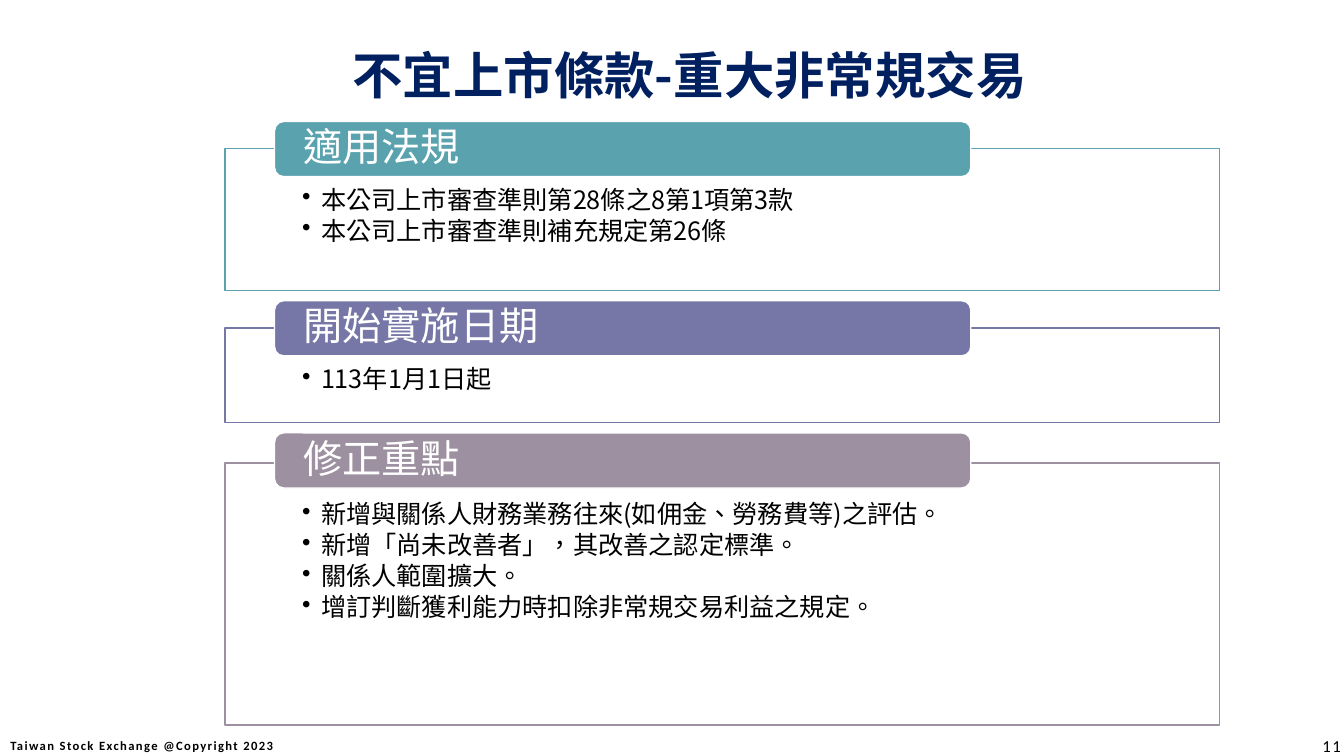
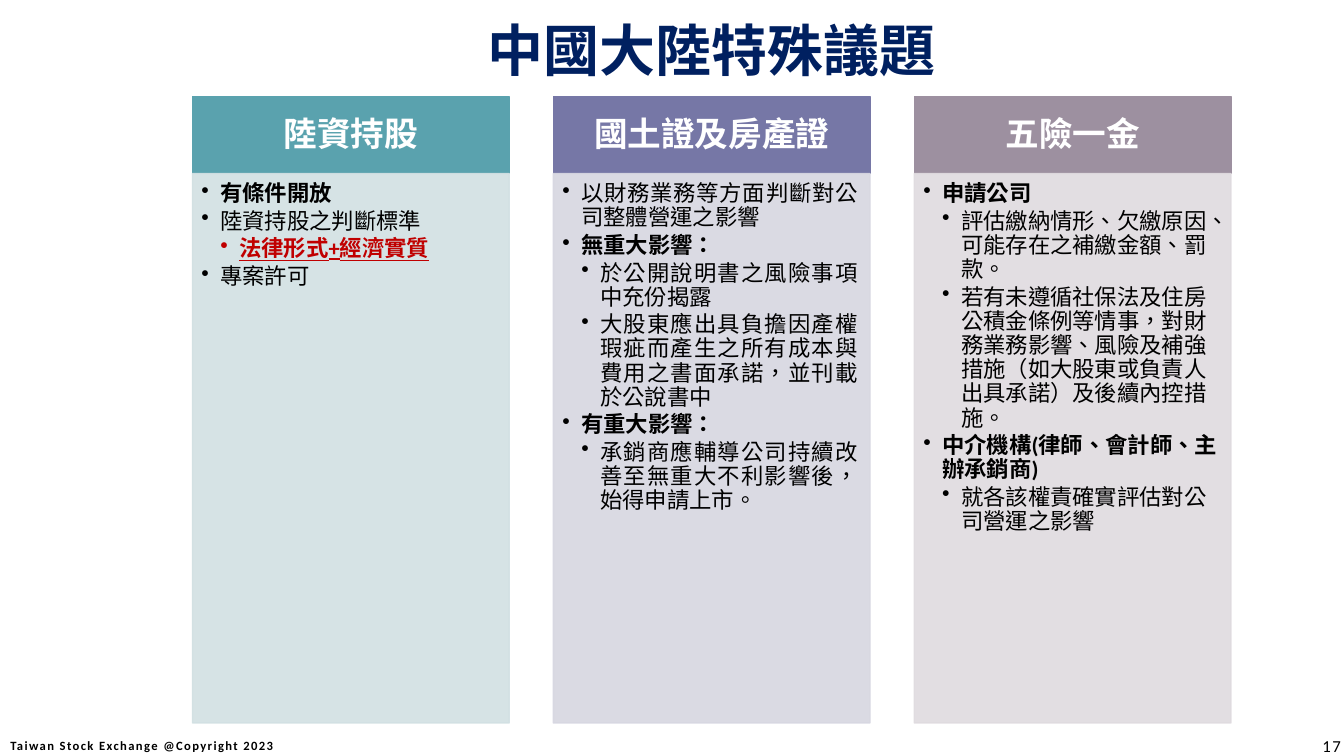
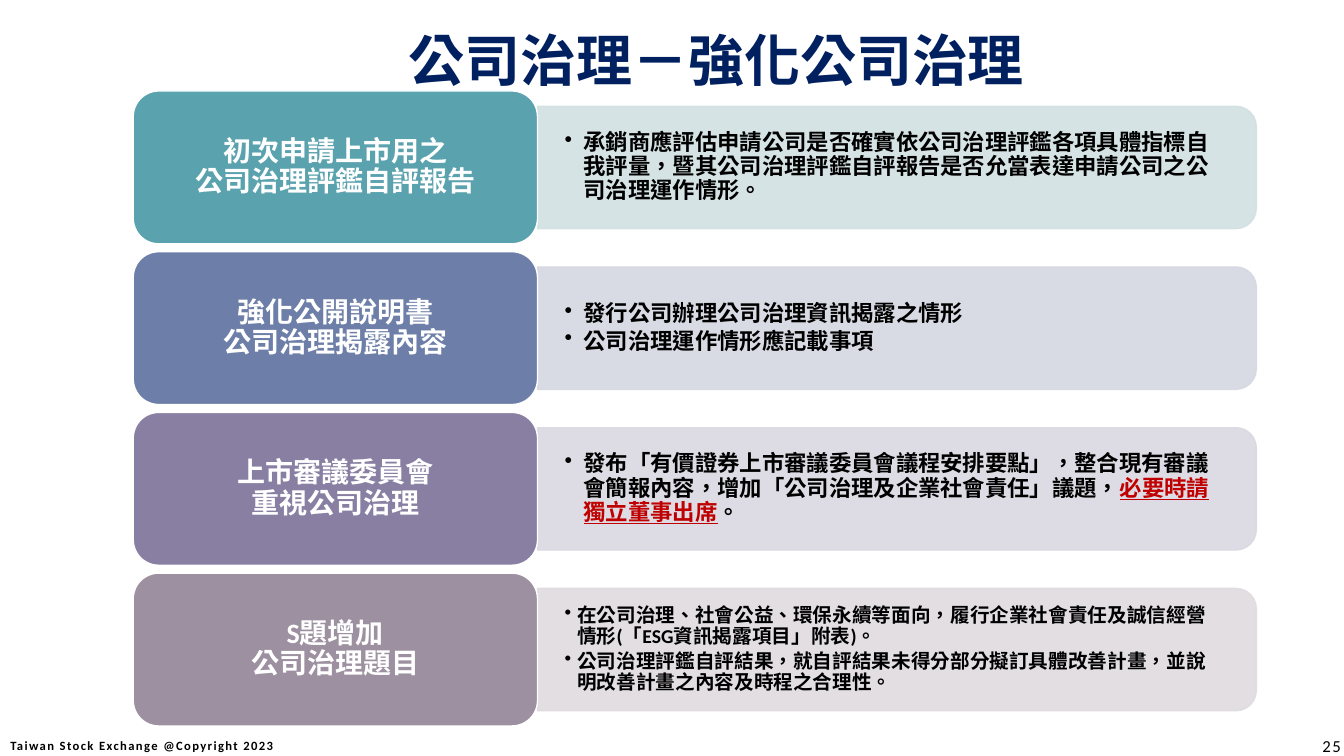
from lxml import etree
from pptx import Presentation
from pptx.dml.color import RGBColor
from pptx.enum.shapes import MSO_SHAPE
from pptx.enum.text import MSO_ANCHOR, PP_ALIGN
from pptx.oxml.ns import qn
from pptx.util import Pt

RECT, ROUNDED, HALF_ROUNDED = (
    MSO_SHAPE.RECTANGLE, MSO_SHAPE.ROUNDED_RECTANGLE, MSO_SHAPE.ROUND_2_SAME_RECTANGLE)
TOP, MIDDLE = MSO_ANCHOR.TOP, MSO_ANCHOR.MIDDLE
LEFT, CENTER, RIGHT, JUSTIFY = PP_ALIGN.LEFT, PP_ALIGN.CENTER, PP_ALIGN.RIGHT, PP_ALIGN.JUSTIFY

SANS, BODY, SERIF = "Noto Sans CJK SC", "Calibri", "Vollkorn"
WHITE, BLACK, NAVY, RED = "FFFFFF", "000000", "002060", "C00000"
TEAL, BLUE, INDIGO, VIOLET, MAUVE = "5AA2AE", "6D7FA8", "7677A6", "887FA3", "9D90A0"
TEAL_TINT, BLUE_TINT, INDIGO_TINT = "D2E0E3", "D5D8E2", "D7D7E1"
VIOLET_TINT, MAUVE_TINT = "DAD8E0", "DFDBDF"

BOLD = {"bold": True}
KEY = {"bold": True, "underline": True, "color": RED}
COPYRIGHT = "Taiwan Stock Exchange @Copyright 2023"


def rgb(value):
    """Turn a hex string into a colour."""
    return RGBColor.from_string(value)


def paint(fill, color, alpha=100):
    """Give a fill a solid colour, with its opacity in percent."""
    fill.solid()
    fill.fore_color.rgb = rgb(color)
    if alpha < 100:
        for node in fill._xPr.iter(qn("a:srgbClr")):
            etree.SubElement(node, qn("a:alpha")).set("val", str(alpha * 1000))


def add_box(page, kind, area, fill, line, alpha=100):
    """Add a filled and outlined preset shape."""
    box = page.shapes.add_shape(kind, *map(Pt, area))
    box.shadow.inherit = False
    paint(box.fill, fill, alpha)
    paint(box.line.fill, line, alpha)
    box.line.width = Pt(1)
    return box


def add_text_box(page, area):
    """Add an empty text box."""
    return page.shapes.add_textbox(*map(Pt, area))


def add_span(para, text, style):
    """Add a run in the given style."""
    span = para.add_run()
    span.text = text
    for name in ("bold", "underline"):
        setattr(span.font, name, style.get(name, False))
    span.font.size = Pt(style["size"])
    span.font.name = style["font"]
    span.font.color.rgb = rgb(style.get("color", BLACK))
    props = span._r.get_or_add_rPr()
    props.set("lang", "zh-TW")
    if "tracking" in style:
        props.set("spc", str(style["tracking"] * 100))
    east_asian = etree.Element(qn("a:ea"))
    east_asian.set("typeface", SANS)
    props.find(qn("a:latin")).addnext(east_asian)


def write(box, paras, style, insets=(7.2, 3.6, 7.2, 3.6), anchor=MIDDLE):
    """Write paragraphs given as (level, spans), bulleted from level 1 on."""
    frame = box.text_frame
    sides = ("margin_left", "margin_top", "margin_right", "margin_bottom")
    settings = dict(zip(sides, map(Pt, insets)), word_wrap=True, vertical_anchor=anchor)
    for name, value in settings.items():
        setattr(frame, name, value)
    for index, (level, spans) in enumerate(paras):
        para = frame.paragraphs[0] if index == 0 else frame.add_paragraph()
        if level:
            indent = style.get("indent", 13.5)
            props = para._p.get_or_add_pPr()
            props.set("marL", str(Pt(indent * level)))
            props.set("indent", str(-Pt(indent)))
            etree.SubElement(props, qn("a:buChar")).set("char", "•")
        layout = {"alignment": style.get("align", LEFT),
                  "line_spacing": style.get("spacing", 1.0),
                  "space_after": Pt(style["size"] * 0.15 if level else 0)}
        for name, value in layout.items():
            setattr(para, name, value)
        for text, changes in spans:
            for number, line in enumerate(text.split("\n")):
                if number:
                    para.add_line_break()
                add_span(para, line, {**style, **changes})


def plain(text):
    """Make one unbulleted paragraph."""
    return [(0, [(text, {})])]


def bullet(text, level=1, changes=None):
    """Make one bulleted paragraph of a single run."""
    return level, [(text, changes or {})]


def new_page(deck, number, title, area, style, anchor=MIDDLE):
    """Add a slide with its footer, number and title."""
    page = deck.slides.add_slide(deck.slide_layouts[6])
    small = {"font": BODY, "tracking": 1}
    write(add_text_box(page, (-10, 518.4, 222.5, 28.8)), plain(COPYRIGHT),
          {**small, "size": 9, "bold": True, "align": CENTER})
    write(add_text_box(page, (922.3, 518.4, 42.5, 28.8)), plain(number),
          {**small, "size": 12, "align": RIGHT})
    heading = {"font": SERIF, "size": 40, "bold": True, "color": NAVY, "align": CENTER}
    write(add_text_box(page, area), plain(title), {**heading, **style}, anchor=anchor)
    return page


def add_section(page, area, tab_rise, color, heading, items, align):
    """Add a framed list with a heading tab across its top edge."""
    left, top, width, _ = area
    frame = add_box(page, RECT, area, WHITE, color)
    write(frame, items, {"font": SANS, "size": 18, "spacing": 0.9, "align": align},
          (55.2, 28, 55.2, 10), TOP)
    tab = add_box(page, ROUNDED, (left + 35.5, top - tab_rise, width * 0.7, 39.4), color, WHITE)
    write(tab, plain(heading), {"font": SANS, "size": 28, "spacing": 0.9, "color": WHITE},
          (18.8, 0, 18.8, 0))


def add_column(page, area, color, tint, heading, items, align):
    """Add a column with a heading band over a tinted list."""
    left, top, width, height = area
    band = 54.8
    head = add_box(page, RECT, (left, top, width, band), color, color)
    write(head, plain(heading), {"font": BODY, "size": 24, "bold": True, "color": WHITE,
                                 "spacing": 0.9, "align": CENTER}, (13.7, 8, 13.7, 8))
    body = add_box(page, RECT, (left, top + band, width, height - band), tint, tint, 90)
    write(body, items, {"font": BODY, "size": 16, "spacing": 0.9, "align": align},
          (6.4, 6.4, 8.6, 10), TOP)


def add_row(page, area, color, tint, heading, items, style):
    """Add a row with a heading block and a tinted panel to its right."""
    left, top, width, height = area
    head_width, panel_height = 288.8, 87.4
    panel_left, panel_width = left + head_width, width - head_width
    middle = top + height / 2
    panel = add_box(page, HALF_ROUNDED,
                    (panel_left + (panel_width - panel_height) / 2, middle - panel_width / 2,
                     panel_height, panel_width), tint, tint, 90)
    panel.rotation = 90
    text_box = add_text_box(page, (panel_left, middle - 39.5, panel_width - 4.3, 79))
    write(text_box, items, {"font": BODY, "size": 16, "bold": True, "spacing": 0.9, **style},
          (19.4, 10, 19.4, 10))
    head = add_box(page, ROUNDED, (left, top, head_width, height), color, WHITE)
    write(head, plain(heading), {"font": BODY, "size": 20, "bold": True, "color": WHITE,
                                 "spacing": 0.9, "align": CENTER}, (6, 3, 6, 3))


def build_irregular_deals(deck):
    """Build the slide of three framed sections."""
    page = new_page(deck, "11", "不宜上市條款-重大非常規交易", (88.6, 19.4, 807.8, 64),
                    {"font": SANS, "size": 36, "spacing": 1.2}, TOP)
    sections = [
        (106.2, 101.5, 19.4, TEAL, "適用法規", JUSTIFY, [
            "本公司上市審查準則第28條之8第1項第3款", "本公司上市審查準則補充規定第26條"]),
        (234.2, 67.5, 19.4, INDIGO, "開始實施日期", LEFT, ["113年1月1日起"]),
        (330.6, 187.4, 21.4, MAUVE, "修正重點", JUSTIFY, [
            "新增與關係人財務業務往來(如佣金、勞務費等)之評估。",
            "新增「尚未改善者」，其改善之認定標準。",
            "關係人範圍擴大。",
            "增訂判斷獲利能力時扣除非常規交易利益之規定。"]),
    ]
    for top, height, rise, color, heading, align, items in sections:
        add_section(page, (160.6, top, 710.5, height), rise, color, heading,
                    [bullet(item) for item in items], align)


def build_mainland_topics(deck):
    """Build the slide of three columns."""
    page = new_page(deck, "17", "中國大陸特殊議題", (217.4, 12.2, 581.8, 45.4), {})
    columns = [
        (TEAL, TEAL_TINT, "陸資持股", LEFT, [
            bullet("有條件開放", 1, BOLD),
            bullet("陸資持股之判斷標準"),
            bullet("法律形式+經濟實質", 2, KEY),
            bullet("專案許可")]),
        (INDIGO, INDIGO_TINT, "國土證及房產證", JUSTIFY, [
            bullet("以財務業務等方面判斷對公司整體營運之影響"),
            bullet("無重大影響：", 1, BOLD),
            bullet("於公開說明書之風險事項中充份揭露", 2),
            bullet("大股東應出具負擔因產權瑕疵而產生之所有成本與費用之書面承諾，並刊載於公說書中", 2),
            bullet("有重大影響：", 1, BOLD),
            bullet("承銷商應輔導公司持續改善至無重大不利影響後，始得申請上市。", 2)]),
        (MAUVE, MAUVE_TINT, "五險一金", LEFT, [
            bullet("申請公司", 1, BOLD),
            bullet("評估繳納情形、欠繳原因、可能存在之補繳金額、罰款。", 2),
            bullet("若有未遵循社保法及住房公積金條例等情事，對財務業務影響、風險及補強措施"
                   "（如大股東或負責人出具承諾）及後續內控措施。", 2),
            bullet("中介機構(律師、會計師、主辦承銷商)", 1, BOLD),
            bullet("就各該權責確實評估對公司營運之影響", 2)]),
    ]
    for index, (color, tint, heading, align, items) in enumerate(columns):
        add_column(page, (137.5 + 257.8 * index, 69.1, 226.2, 447.3),
                   color, tint, heading, items, align)


def build_governance(deck):
    """Build the slide of four rows."""
    page = new_page(deck, "25", "公司治理－強化公司治理", (146.2, 19.4, 730.8, 45.4), {})
    rows = [
        (TEAL, TEAL_TINT, "初次申請上市用之\n公司治理評鑑自評報告", {}, [
            bullet("承銷商應評估申請公司是否確實依公司治理評鑑各項具體指標自我評量，"
                   "暨其公司治理評鑑自評報告是否允當表達申請公司之公司治理運作情形。")]),
        (BLUE, BLUE_TINT, "強化公開說明書\n公司治理揭露內容", {}, [
            bullet("發行公司辦理公司治理資訊揭露之情形"),
            bullet("公司治理運作情形應記載事項")]),
        (VIOLET, VIOLET_TINT, "上市審議委員會\n重視公司治理", {}, [
            (1, [("發布「有價證券上市審議委員會議程安排要點」，整合現有審議會簡報內容，"
                  "增加「公司治理及企業社會責任」議題，", {}),
                 ("必要時請獨立董事出席", KEY),
                 ("。", {})])]),
        (MAUVE, MAUVE_TINT, "S題增加\n公司治理題目", {"size": 14, "indent": 9}, [
            bullet("在公司治理、社會公益、環保永續等面向，履行企業社會責任及誠信經營情形"
                   "(「ESG資訊揭露項目」附表)。"),
            bullet("公司治理評鑑自評結果，就自評結果未得分部分擬訂具體改善計畫，"
                   "並說明改善計畫之內容及時程之合理性。")]),
    ]
    for index, (color, tint, heading, style, items) in enumerate(rows):
        add_row(page, (95.2, 65 + 114.8 * index, 802.2, 109.2),
                color, tint, heading, items, style)


def main():
    """Build and save the deck."""
    deck = Presentation()
    deck.slide_width, deck.slide_height = Pt(960), Pt(540)
    for build in (build_irregular_deals, build_mainland_topics, build_governance):
        build(deck)
    deck.save("out.pptx")


if __name__ == "__main__":
    main()
